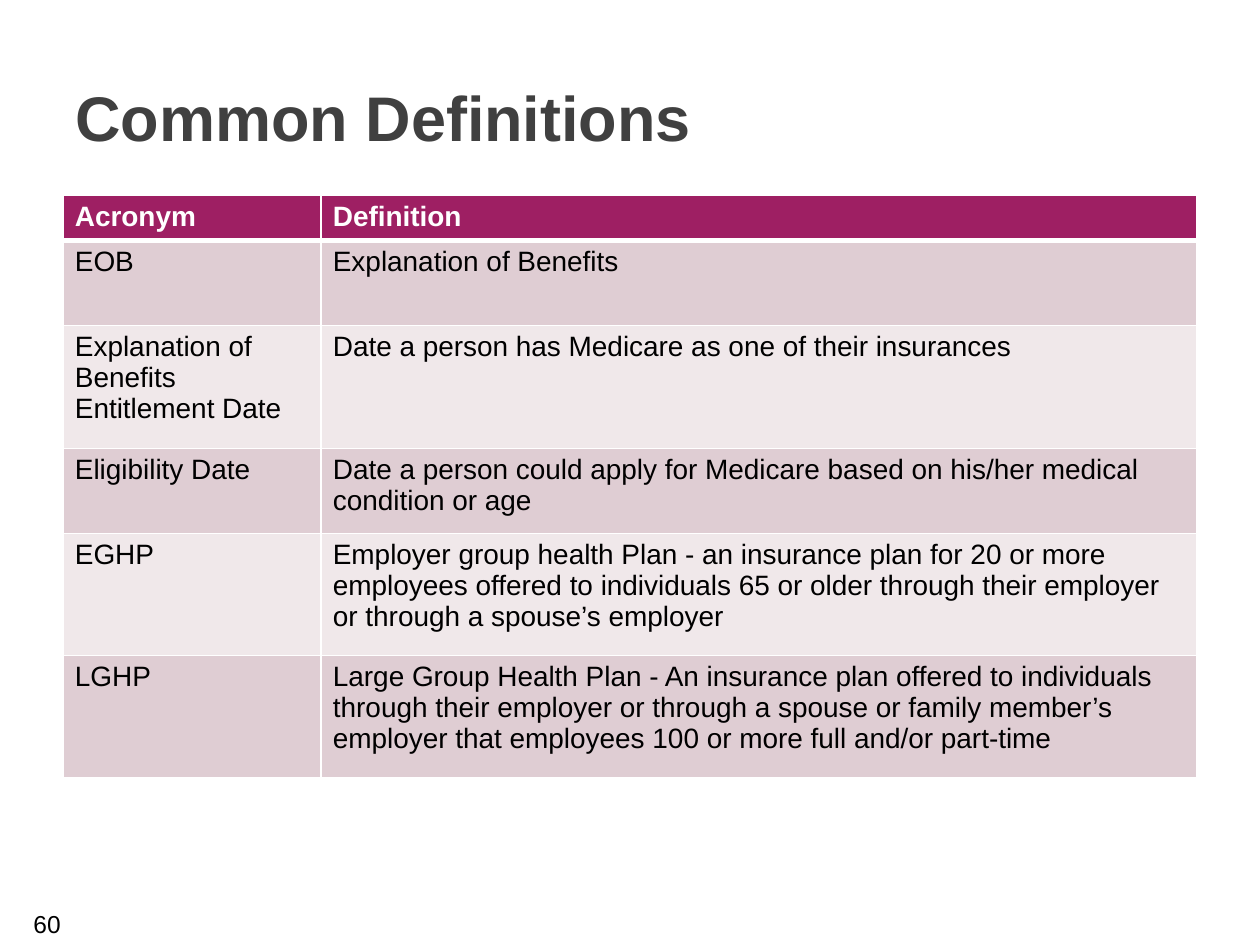
from pptx import Presentation
from pptx.dml.color import RGBColor
from pptx.enum.text import MSO_ANCHOR
from pptx.oxml import parse_xml
from pptx.oxml.ns import nsdecls
from pptx.util import Emu, Pt

EMU_PER_PX = 914400 / 126

THEME = {
    "font": "Arial",
    "title": "404040",
    "text": "000000",
    "header_text": "FFFFFF",
    "header_fill": "9E1F63",
    "bands": ["DFCDD3", "F0E8EA"],
    "border": "FFFFFF",
    "title_size": 36,
    "table_size": 16,
    "number_size": 14,
}


def px(length):
    return Emu(round(length * EMU_PER_PX))


def add_run(paragraph, text, size, color, bold=False):
    run = paragraph.add_run()
    run.text = text
    run.font.name = THEME["font"]
    run.font.size = Pt(size)
    run.font.bold = bold
    run.font.color.rgb = RGBColor.from_string(color)


presentation = Presentation()
presentation.slide_width = px(1260)
presentation.slide_height = px(945)
slide = presentation.slides.add_slide(presentation.slide_layouts[6])

# Title and page number
labels = [
    ("Common Definitions", (63, 38, 1134, 157), THEME["title_size"], THEME["title"], True),
    ("60", (21, 903, 294, 42), THEME["number_size"], THEME["text"], False),
]
for text, box, size, color, bold in labels:
    shape = slide.shapes.add_textbox(*[px(length) for length in box])
    shape.text_frame.word_wrap = True
    shape.text_frame.vertical_anchor = MSO_ANCHOR.MIDDLE
    add_run(shape.text_frame.paragraphs[0], text, size, color, bold)

# Definitions table
definitions = [
    ("Acronym", "Definition"),
    ("EOB", "Explanation of Benefits"),
    ("Explanation of Benefits Entitlement Date",
     "Date a person has Medicare as one of their insurances"),
    ("Eligibility Date",
     "Date a person could apply for Medicare based on his/her medical condition or age"),
    ("EGHP",
     "Employer group health Plan - an insurance plan for 20 or more employees offered to "
     "individuals 65 or older through their employer or through a spouse’s employer"),
    ("LGHP",
     "Large Group Health Plan - An insurance plan offered to individuals through their "
     "employer or through a spouse or family member’s employer that employees 100 or more "
     "full and/or part-time"),
]
column_widths = [258, 876]
row_heights = [45, 85, 123, 85, 122, 122]

table = slide.shapes.add_table(
    len(row_heights), len(column_widths),
    px(63), px(195), px(sum(column_widths)), px(sum(row_heights)),
).table
for column, width in zip(table.columns, column_widths):
    column.width = px(width)

for row_index, (height, texts) in enumerate(zip(row_heights, definitions)):
    table.rows[row_index].height = px(height)
    is_header = row_index == 0
    fill = THEME["header_fill"] if is_header else THEME["bands"][(row_index - 1) % 2]
    color = THEME["header_text"] if is_header else THEME["text"]

    # The rule under the header is thicker than the others
    border_widths = {
        "lnL": 1,
        "lnR": 1,
        "lnT": 3 if row_index == 1 else 1,
        "lnB": 3 if is_header else 1,
    }
    for column_index, text in enumerate(texts):
        cell = table.cell(row_index, column_index)
        cell.margin_left = cell.margin_right = px(12)
        cell.margin_top = cell.margin_bottom = px(6)
        add_run(cell.text_frame.paragraphs[0], text, THEME["table_size"], color, is_header)

        # Borders come before the fill in the cell properties
        properties = cell._tc.get_or_add_tcPr()
        for side, width in border_widths.items():
            properties.append(parse_xml(
                f'<a:{side} {nsdecls("a")} w="{Pt(width)}"><a:solidFill>'
                f'<a:srgbClr val="{THEME["border"]}"/></a:solidFill></a:{side}>'
            ))
        cell.fill.solid()
        cell.fill.fore_color.rgb = RGBColor.from_string(fill)

presentation.save("out.pptx")
